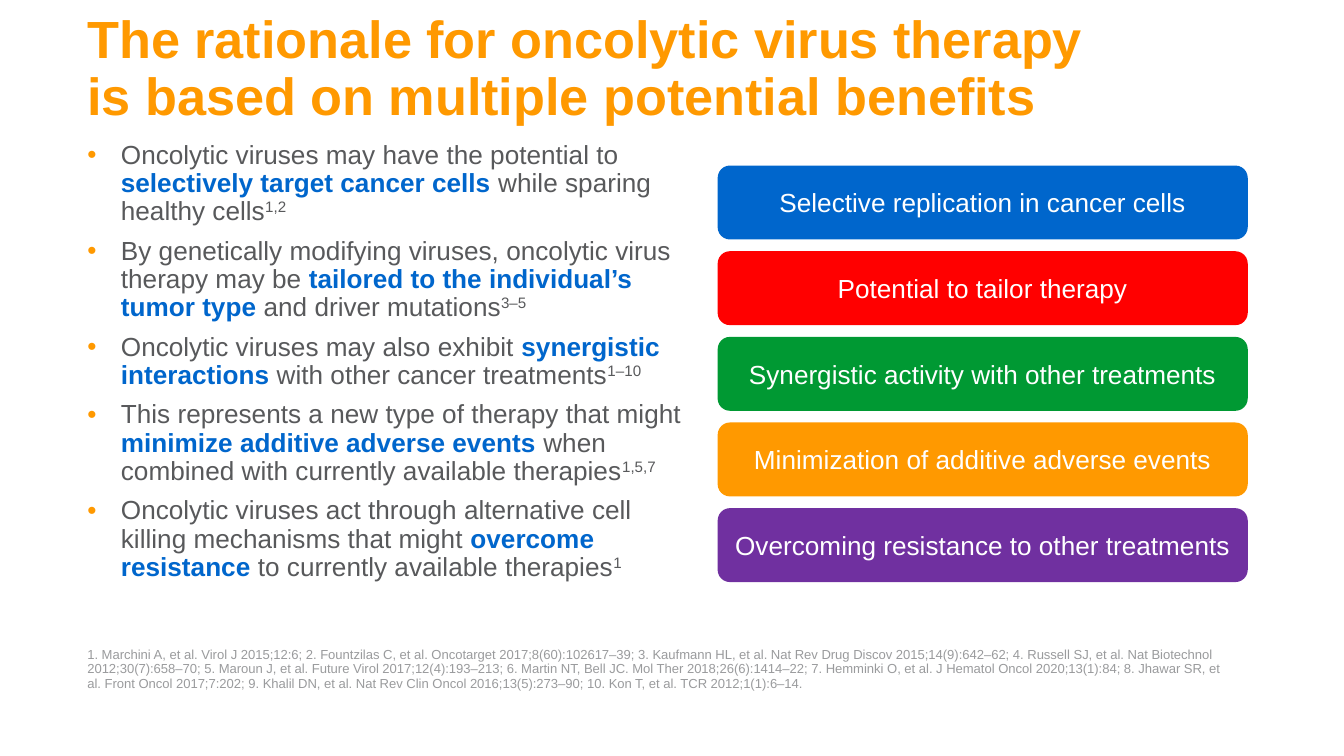
from lxml import etree
from pptx import Presentation
from pptx import util as u
from pptx.dml.color import RGBColor
from pptx.enum import shapes, text
from pptx.oxml.ns import qn

ORANGE = RGBColor(0xFF, 0x99, 0x00)
BLUE = RGBColor(0x00, 0x66, 0xCC)
RED = RGBColor(0xFF, 0x00, 0x00)
GREEN = RGBColor(0x00, 0x99, 0x33)
PURPLE = RGBColor(0x70, 0x30, 0xA0)
DARK = RGBColor(0x58, 0x59, 0x5B)
GREY = RGBColor(0x9A, 0x9B, 0x9D)
WHITE = RGBColor(0xFF, 0xFF, 0xFF)

prs = Presentation()
prs.slide_width = u.Inches(10)
prs.slide_height = prs.slide_width * 9 // 16
s = prs.slides.add_slide(prs.slide_layouts[6])

# Lengths below are percentages of the slide's width and height.
COL, ROW = prs.slide_width / 100, prs.slide_height / 100
LEFT = 6.5


def add_text(top, width, height, anchor):
    """Add a wrapping text box without margins at the left edge."""
    tf = s.shapes.add_textbox(*map(int, (LEFT * COL, top * ROW, width * COL, height * ROW))).text_frame
    tf.word_wrap = True
    tf.vertical_anchor = anchor
    tf.margin_left = tf.margin_top = tf.margin_right = tf.margin_bottom = 0
    return tf


def add_run(p, words, size, color, bold=False):
    r = p.add_run()
    r.text = words
    r.font.name, r.font.size, r.font.bold = "Arial", u.Pt(size), bold
    r.font.color.rgb = color
    return r


# Title
tf = add_text(5.33, 75.6, 11.38, text.MSO_ANCHOR.BOTTOM)
p = tf.paragraphs[0]
p.line_spacing = 0.9
add_run(p, "The rationale for oncolytic virus therapy is based on multiple potential benefits",
        28, ORANGE, True)

# Bullets: plain lead, key phrase, plain ending, reference numbers
bullets = [
    ("Oncolytic viruses may have the potential to ", "selectively target cancer cells",
     " while sparing healthy cells", "1,2"),
    ("By genetically modifying viruses, oncolytic virus therapy may be ",
     "tailored to the individual’s tumor type ", "and driver mutations", "3–5"),
    ("Oncolytic viruses may also exhibit ", "synergistic interactions ",
     "with other cancer treatments", "1–10"),
    ("This represents a new type of therapy that might ", "minimize additive adverse events",
     " when combined with currently available therapies", "1,5,7"),
    ("Oncolytic viruses act through alternative cell killing mechanisms that might ",
     "overcome resistance ", "to currently available therapies", "1"),
]
tf = add_text(18.75, 44.3, 63.47, text.MSO_ANCHOR.TOP)
for i, (lead, key, ending, refs) in enumerate(bullets):
    p = tf.add_paragraph() if i else tf.paragraphs[0]
    p.line_spacing, p.space_before = 0.9, u.Pt(6)
    pPr = p._p.get_or_add_pPr()
    pPr.set("marL", str(int(2.5 * COL)))
    pPr.set("indent", str(int(-2.5 * COL)))
    clr = etree.SubElement(pPr, qn("a:buClr"))
    etree.SubElement(clr, qn("a:srgbClr"), val=str(ORANGE))
    etree.SubElement(pPr, qn("a:buFont"), typeface="Arial")
    etree.SubElement(pPr, qn("a:buChar"), char="•")
    add_run(p, lead, 14, DARK)
    add_run(p, key, 14, BLUE, True)
    add_run(p, ending, 14, DARK)
    r = add_run(p, refs, 14, DARK)
    r._r.get_or_add_rPr().set("baseline", "30000")

# References
references = (
    "1. Marchini A, et al. Virol J 2015;12:6; "
    "2. Fountzilas C, et al. Oncotarget 2017;8(60):102617–39; "
    "3. Kaufmann HL, et al. Nat Rev Drug Discov 2015;14(9):642–62; "
    "4. Russell SJ, et al. Nat Biotechnol 2012;30(7):658–70; "
    "5. Maroun J, et al. Future Virol 2017;12(4):193–213; "
    "6. Martin NT, Bell JC. Mol Ther 2018;26(6):1414–22; "
    "7. Hemminki O, et al. J Hematol Oncol 2020;13(1):84; "
    "8. Jhawar SR, et al. Front Oncol 2017;7:202; "
    "9. Khalil DN, et al. Nat Rev Clin Oncol 2016;13(5):273–90; "
    "10. Kon T, et al. TCR 2012;1(1):6–14."
)
tf = add_text(85.51, 84.7, 5.87, text.MSO_ANCHOR.BOTTOM)
p = tf.paragraphs[0]
p.line_spacing, p.space_after = 0.9, u.Pt(2)
add_run(p, references, 7, GREY)

# Benefit bars, evenly stacked
benefits = [
    ("Selective replication in cancer cells", BLUE),
    ("Potential to tailor therapy", RED),
    ("Synergistic activity with other treatments", GREEN),
    ("Minimization of additive adverse events", ORANGE),
    ("Overcoming resistance to other treatments", PURPLE),
]
BAR_TOP, BAR_HEIGHT, BAR_PITCH = 21.9, 9.78, 11.33
for i, (label, color) in enumerate(benefits):
    top = BAR_TOP + i * BAR_PITCH
    sp = s.shapes.add_shape(shapes.MSO_SHAPE.ROUNDED_RECTANGLE,
                            *map(int, (53.4 * COL, top * ROW, 39.44 * COL, BAR_HEIGHT * ROW)))
    sp.shadow.inherit = False
    sp.fill.solid()
    sp.fill.fore_color.rgb = color
    sp.line.fill.background()
    tf = sp.text_frame
    tf.word_wrap = True
    tf.vertical_anchor = text.MSO_ANCHOR.MIDDLE
    tf.margin_left = tf.margin_top = tf.margin_right = tf.margin_bottom = int(0.5 * COL)
    p = tf.paragraphs[0]
    p.alignment = text.PP_ALIGN.CENTER
    add_run(p, label, 14, WHITE)

prs.save("out.pptx")
